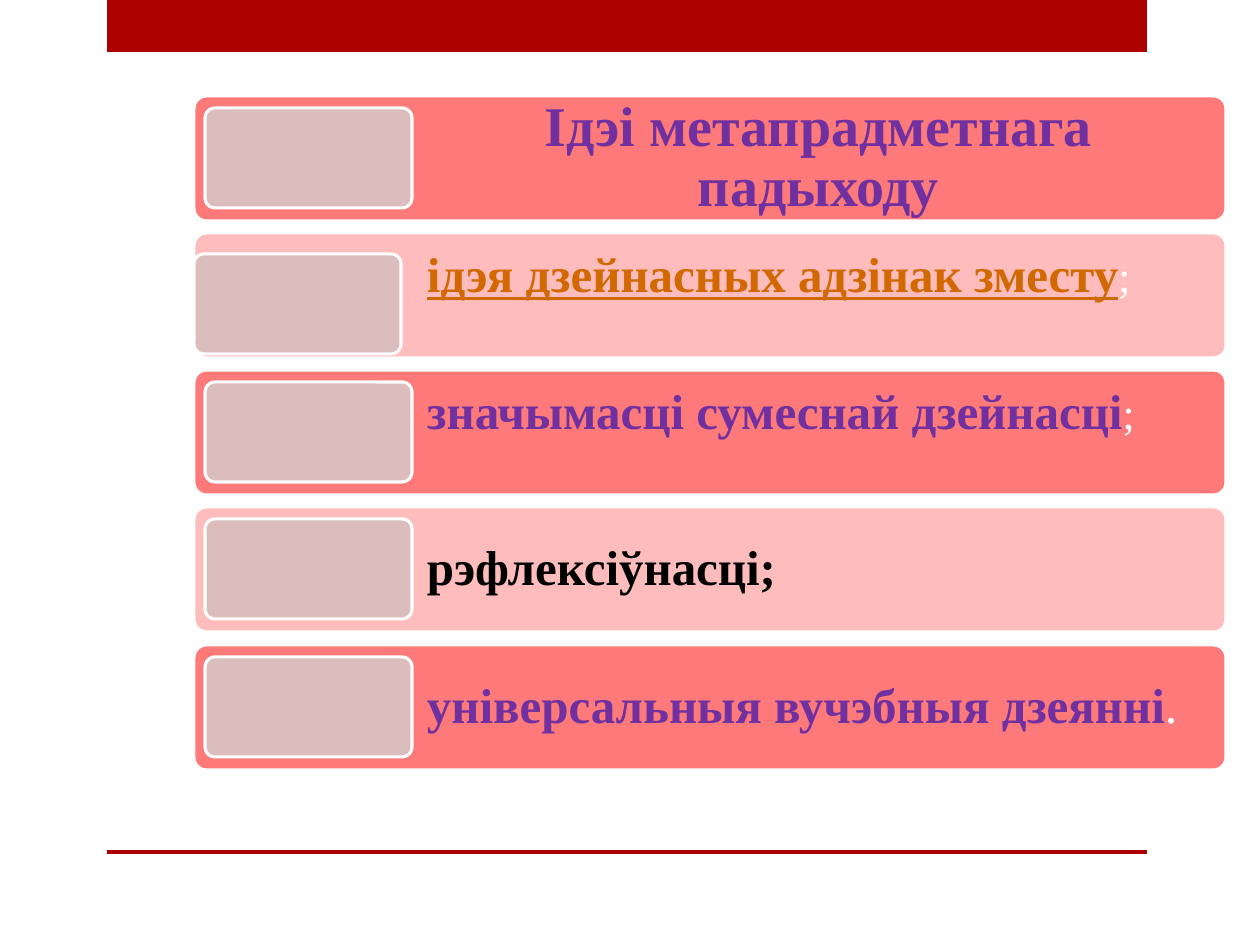
from pptx import Presentation
from pptx.dml.color import RGBColor
from pptx.enum.shapes import MSO_SHAPE
from pptx.enum.text import MSO_ANCHOR, MSO_AUTO_SIZE, PP_ALIGN
from pptx.util import Pt

PX = 914400 / 126
FONT = "Times New Roman"
DARK_RED = RGBColor(0xAD, 0x01, 0x01)
CORAL = RGBColor(0xFE, 0x79, 0x79)
PINK = RGBColor(0xFF, 0xBC, 0xBC)
DUSTY = RGBColor(0xDB, 0xBD, 0xBD)
PURPLE = RGBColor(0x70, 0x30, 0xA0)
ORANGE = RGBColor(0xD2, 0x69, 0x00)
BLACK = RGBColor(0, 0, 0)
WHITE = RGBColor(0xFF, 0xFF, 0xFF)

TITLE = "Ідэі метапрадметнага падыходу"
IDEAS = [
    ("ідэя дзейнасных адзінак зместу", ORANGE, ";", 25, True),
    ("значымасці сумеснай дзейнасці", PURPLE, ";", 25, True),
    ("рэфлексіўнасці;", BLACK, "", 28, False),
    ("універсальныя вучэбныя дзеянні", PURPLE, ".", 29, False),
]
TEXT_LEFT, TEXT_WIDTH, ROW_HEIGHT = 412, 813, 125


def px(value):
    return round(value * PX)


def row_top(index):
    return 96 + index * 549 // 4


def add_block(slide, kind, left, top, width, height, color):
    shape = slide.shapes.add_shape(kind, px(left), px(top), px(width), px(height))
    shape.shadow.inherit = False
    shape.fill.solid()
    shape.fill.fore_color.rgb = color
    shape.line.fill.background()
    return shape


def add_card(slide, left, top, width, height, color):
    shape = add_block(slide, MSO_SHAPE.ROUNDED_RECTANGLE, left, top, width, height, color)
    shape.adjustments[0] = 0.1
    shape.line.color.rgb = WHITE
    shape.line.width = Pt(1.75)


def add_row(slide, index):
    shifted = index == 1
    top = row_top(index)
    add_card(slide, 194, top, 1032, ROW_HEIGHT, PINK if index % 2 else CORAL)
    add_card(slide, 194 if shifted else 205, top + (21 if shifted else 12), 207, 100, DUSTY)


def format_frame(frame, inset):
    frame.word_wrap = True
    frame.auto_size = MSO_AUTO_SIZE.NONE
    frame.vertical_anchor = MSO_ANCHOR.MIDDLE
    frame.margin_left = frame.margin_right = px(inset)
    frame.margin_top = frame.margin_bottom = px(inset)


def format_font(font, size, color, bold):
    font.name = FONT
    font.size = Pt(size)
    font.color.rgb = color
    font.bold = bold


def place_title(slide):
    title = slide.shapes.title
    title.left, title.top = px(TEXT_LEFT), px(row_top(0))
    title.width, title.height = px(TEXT_WIDTH), px(ROW_HEIGHT)
    title.element.getparent().append(title.element)
    format_frame(title.text_frame, 16)
    title.text_frame.text = TITLE
    paragraph = title.text_frame.paragraphs[0]
    paragraph.alignment = PP_ALIGN.CENTER
    paragraph.line_spacing = 0.9
    format_font(paragraph.font, 32, PURPLE, True)


def add_idea(slide, index, words, color, mark, mark_size, raised):
    box = slide.shapes.add_textbox(
        px(TEXT_LEFT), px(row_top(index)), px(TEXT_WIDTH), px(ROW_HEIGHT))
    frame = box.text_frame
    format_frame(frame, 15)
    paragraph = frame.paragraphs[0]
    if raised:
        frame.vertical_anchor = MSO_ANCHOR.TOP
        frame.margin_top = px(11)
    else:
        paragraph.line_spacing = 0.9
    run = paragraph.add_run()
    run.text = words
    format_font(run.font, 28, color, True)
    if color == ORANGE:
        run.font.underline = True
    if mark:
        ending = paragraph.add_run()
        ending.text = mark
        format_font(ending.font, mark_size, WHITE, False)


def main():
    presentation = Presentation()
    presentation.slide_width, presentation.slide_height = px(1260), px(945)
    slide = presentation.slides.add_slide(presentation.slide_layouts[5])
    for top, height in ((0, 52), (850, 4)):
        add_block(slide, MSO_SHAPE.RECTANGLE, 107, top, 1040, height, DARK_RED)
    add_row(slide, 0)
    place_title(slide)
    for index, idea in enumerate(IDEAS, 1):
        add_row(slide, index)
        add_idea(slide, index, *idea)
    presentation.save("out.pptx")


if __name__ == "__main__":
    main()
